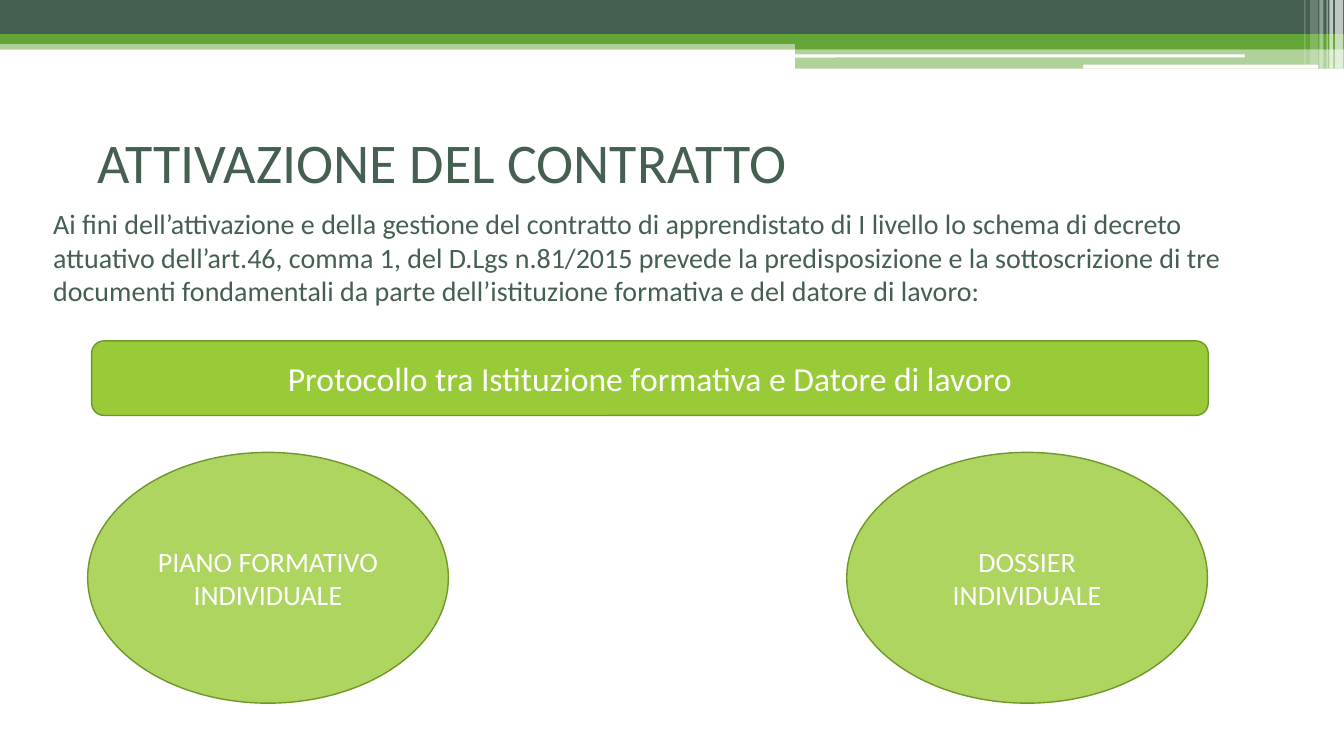
from dataclasses import dataclass

from lxml import etree
from pptx import Presentation
from pptx.dml.color import RGBColor
from pptx.enum import shapes, text
from pptx.oxml.ns import qn
from pptx.util import Cm, Pt


@dataclass(frozen=True)
class Theme:
    font: str = "Calibri"
    dark: str = "455F51"
    green: str = "63A537"
    lime: str = "99CB38"
    outline: str = "719629"
    white: str = "FFFFFF"
    title_size: int = 40
    banner_size: int = 24
    text_size: int = 20


theme = Theme()
RECT = shapes.MSO_SHAPE.RECTANGLE
ROUNDED = shapes.MSO_SHAPE.ROUNDED_RECTANGLE
OVAL = shapes.MSO_SHAPE.OVAL

deck = Presentation()
deck.slide_width, deck.slide_height = Cm(33.87), Cm(19.05)
page = deck.slides.add_slide(deck.slide_layouts[6])


def add_filled(kind, place, color, opacity=100):
    """Add a flat shape without outline; place is left, top, width, height in cm."""
    shape = page.shapes.add_shape(kind, *map(Cm, place))
    shape.shadow.inherit = False
    shape.line.fill.background()
    shape.fill.solid()
    shape.fill.fore_color.rgb = RGBColor.from_string(color)
    if opacity < 100:
        tint = shape.fill._xPr.find(".//" + qn("a:srgbClr"))
        etree.SubElement(tint, qn("a:alpha"), val=str(opacity * 1000))
    return shape


def write(box, wording, size, color, align=text.PP_ALIGN.LEFT):
    box.text_frame.word_wrap = True
    para = box.text_frame.paragraphs[0]
    para.text = wording
    para.alignment = align
    para.font.name = theme.font
    para.font.size = Pt(size)
    para.font.color.rgb = RGBColor.from_string(color)


# Header bands
for place, color, opacity in [
    ((0, 1.02, 33.87, 0.23), theme.green, 50),
    ((0, 0, 33.87, 0.86), theme.dark, 100),
    ((0, 0.86, 33.87, 0.25), theme.green, 100),
    ((20.04, 0.99, 13.83, 0.25), theme.green, 100),
    ((20.04, 1.22, 13.83, 0.51), theme.green, 50),
]:
    add_filled(RECT, place, color, opacity)

for place in [(20.02, 1.37, 11.35, 0.08), (27.3, 1.63, 5.92, 0.1)]:
    add_filled(ROUNDED, place, theme.white)

# Vertical stripes at the right end of the header
for left, width, height, opacity in [
    (33.65, 0.2, 1.73, 65),
    (33.5, 0.1, 1.73, 65),
    (33.43, 0.03, 1.73, 60),
    (33.25, 0.1, 1.73, 40),
    (33.02, 0.2, 1.63, 20),
    (32.87, 0.03, 1.63, 30),
]:
    add_filled(RECT, (left, 0, width, height), theme.white, opacity)

# Title and introduction
for place, wording, size in [
    ((2.21, 3.1, 25.53, 1.96), "ATTIVAZIONE DEL CONTRATTO", theme.title_size),
    (
        (1.09, 5.08, 30.56, 2.82),
        "Ai fini dell’attivazione e della gestione del contratto di apprendistato "
        "di I livello lo schema di decreto attuativo dell’art.46, comma 1, del "
        "D.Lgs n.81/2015 prevede la predisposizione e la sottoscrizione di tre "
        "documenti fondamentali da parte dell’istituzione formativa e del datore "
        "di lavoro:",
        theme.text_size,
    ),
]:
    box = page.shapes.add_textbox(*map(Cm, place))
    write(box, wording, size, theme.dark)

# The three documents
for kind, place, wording, size, opacity in [
    (ROUNDED, (2.31, 8.59, 28.14, 1.88),
     "Protocollo tra Istituzione formativa e Datore di lavoro",
     theme.banner_size, 100),
    (OVAL, (2.21, 11.4, 9.09, 6.32), "PIANO FORMATIVO INDIVIDUALE",
     theme.text_size, 80),
    (OVAL, (21.34, 11.4, 9.09, 6.32), "DOSSIER INDIVIDUALE",
     theme.text_size, 80),
]:
    document = add_filled(kind, place, theme.lime, opacity)
    document.line.color.rgb = RGBColor.from_string(theme.outline)
    document.line.width = Pt(1)
    document.text_frame.vertical_anchor = text.MSO_ANCHOR.MIDDLE
    write(document, wording, size, theme.white, text.PP_ALIGN.CENTER)

deck.save("out.pptx")
